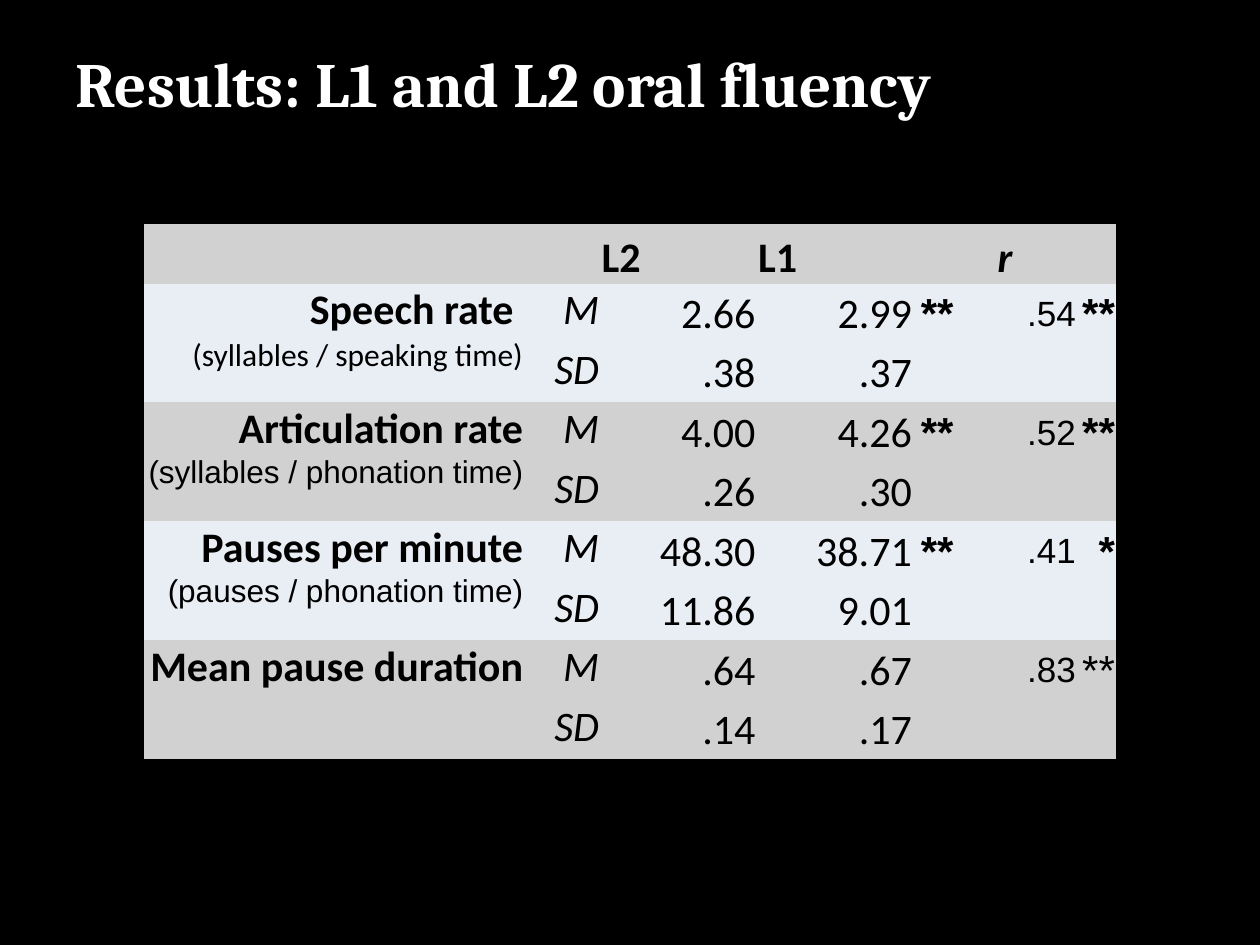
"""Build the slide comparing L1 and L2 oral fluency results."""
from dataclasses import dataclass

from pptx import Presentation
from pptx.dml.color import RGBColor
from pptx.enum import text
from pptx.util import Pt


@dataclass(frozen=True)
class Theme:
    background: str = "000000"
    title: str = "FFFFFF"
    ink: str = "000000"
    grey: str = "D1D1D1"
    pale: str = "E9EDF4"
    heading_font: str = "Cambria"
    body_font: str = "Calibri"
    symbol_font: str = "Arial"
    title_size: int = 36
    body_size: int = 24
    r_size: int = 20
    note_size: int = 18


theme = Theme()
TOP, MIDDLE, BOTTOM = (text.MSO_ANCHOR.TOP, text.MSO_ANCHOR.MIDDLE,
                       text.MSO_ANCHOR.BOTTOM)
LEFT, RIGHT = text.PP_ALIGN.LEFT, text.PP_ALIGN.RIGHT
NO_GRID_STYLE = "{2D5ABB26-0587-4C30-8999-92F81FD0307C}"


def write(paragraph, wording, align=RIGHT, color=theme.ink, **font_format):
    paragraph.alignment = align
    run = paragraph.add_run()
    run.text = wording
    values = {"name": theme.body_font, "size": Pt(theme.body_size),
              "bold": False, "italic": False, **font_format}
    for key, value in values.items():
        setattr(run.font, key, value)
    run.font.color.rgb = RGBColor.from_string(color)


def fill_cell(row, column, wording, anchor=MIDDLE, **formats):
    cell = results.cell(row, column)
    margins = {"margin_left": Pt(0.75), "margin_right": Pt(0.75),
               "margin_top": Pt(0.75), "margin_bottom": 0}
    for key, value in {**margins, "vertical_anchor": anchor}.items():
        setattr(cell, key, value)
    write(cell.text_frame.paragraphs[0], wording, **formats)
    return cell


presentation = Presentation()
presentation.slide_width, presentation.slide_height = Pt(720), Pt(540)
slide = presentation.slides.add_slide(presentation.slide_layouts[5])
slide.background.fill.solid()
slide.background.fill.fore_color.rgb = RGBColor.from_string(theme.background)

heading = slide.shapes.title
placement = {"left": Pt(36), "top": Pt(21.6), "width": Pt(648), "height": Pt(90)}
for key, value in placement.items():
    setattr(heading, key, value)
heading.text_frame.vertical_anchor = TOP
heading.text_frame.auto_size = text.MSO_AUTO_SIZE.NONE
write(heading.text_frame.paragraphs[0], "Results: L1 and L2 oral fluency",
      align=LEFT, color=theme.title, name=theme.heading_font,
      size=Pt(theme.title_size), bold=True)

measures = [
    ("Speech rate ", "(syllables / speaking time)", theme.body_font,
     ("2.66", "2.99"), (".38", ".37"), "**", ".54", "**", True),
    ("Articulation rate", "(syllables / phonation time)", theme.symbol_font,
     ("4.00", "4.26"), (".26", ".30"), "**", ".52", "**", True),
    ("Pauses per minute", "(pauses / phonation time)", theme.symbol_font,
     ("48.30", "38.71"), ("11.86", "9.01"), "**", ".41", "*", True),
    ("Mean pause duration", "", theme.symbol_font,
     (".64", ".67"), (".14", ".17"), "", ".83", "**", False),
]
column_widths = [217.4, 43.4, 89.4, 89.4, 23.8, 23.8, 46.1, 22.3]
row_height = 34
row_count = 1 + 2 * len(measures)

results = slide.shapes.add_table(
    row_count, len(column_widths), Pt(82.3), Pt(128),
    Pt(sum(column_widths)), Pt(row_height * row_count)).table
results.first_row = results.horz_banding = False
results._tbl.tblPr[0].text = NO_GRID_STYLE
for column, width in zip(results.columns, column_widths):
    column.width = Pt(width)
for index, row in enumerate(results.rows):
    row.height = Pt(row_height)
    band = theme.pale if (index + 1) // 2 % 2 else theme.grey
    for cell in row.cells:
        cell.fill.solid()
        cell.fill.fore_color.rgb = RGBColor.from_string(band)

for column, label in {2: "L2", 3: "L1", 6: "r"}.items():
    fill_cell(0, column, label, anchor=BOTTOM, align=LEFT, bold=True,
              italic=label == "r")

for index, measure in enumerate(measures):
    name, note, note_font, means, deviations, mark, r, r_mark, r_bold = measure
    first = 1 + 2 * index
    results.cell(first, 0).merge(results.cell(first + 1, 0))
    name_cell = fill_cell(first, 0, name, anchor=TOP, bold=True)
    if note:
        write(name_cell.text_frame.add_paragraph(), note, name=note_font,
              size=Pt(theme.note_size))
    for offset, (statistic, pair) in enumerate((("M", means), ("SD", deviations))):
        fill_cell(first + offset, 1, statistic, anchor=TOP, italic=True)
        for column, value in enumerate(pair, start=2):
            fill_cell(first + offset, column, value)
    if mark:
        fill_cell(first, 4, mark, name=theme.symbol_font, bold=True)
    fill_cell(first, 6, r, name=theme.symbol_font, size=Pt(theme.r_size))
    fill_cell(first, 7, r_mark, name=theme.symbol_font, bold=r_bold)

presentation.save("out.pptx")
